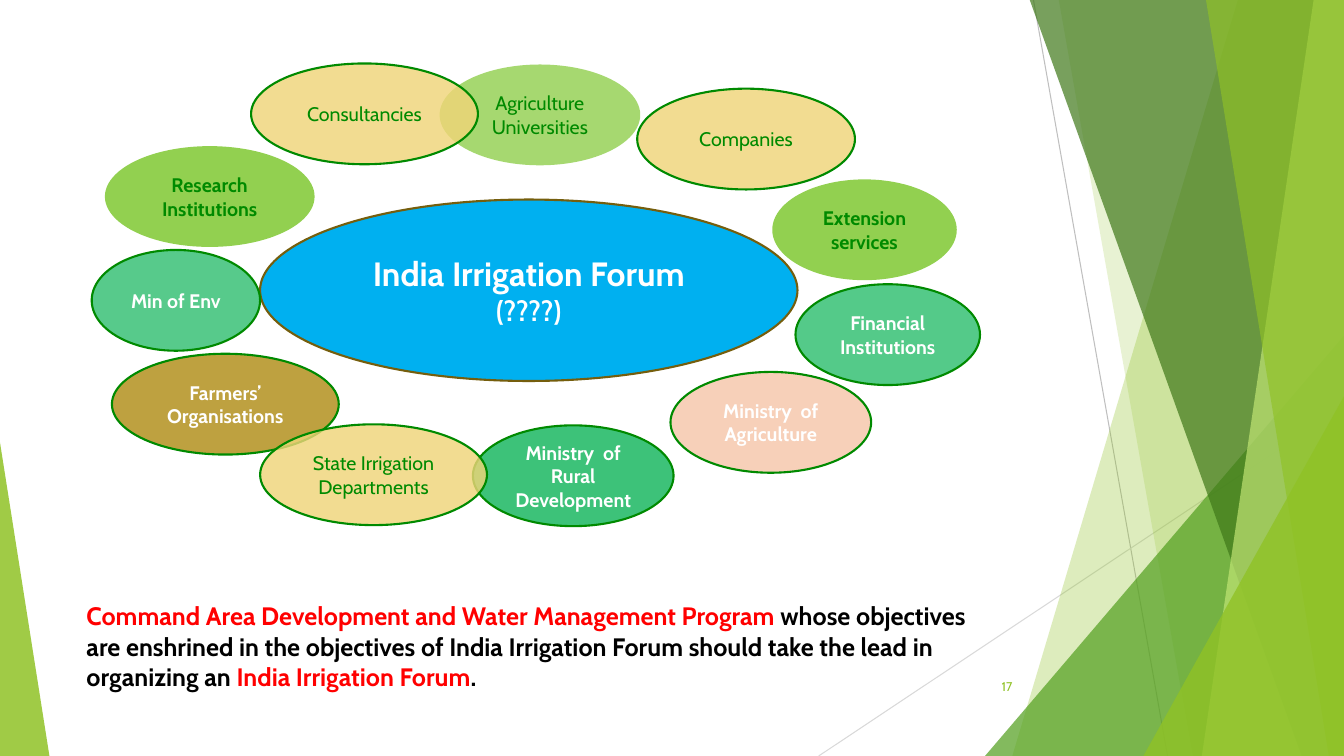
from pptx import Presentation
from pptx.dml.color import RGBColor as RGB
from pptx.enum.shapes import MSO_CONNECTOR as LINK, MSO_SHAPE as SHAPE
from pptx.enum.text import MSO_ANCHOR as ANCHOR, MSO_AUTO_SIZE as FIT, PP_ALIGN as ALIGN
from pptx.oxml.ns import qn
from pptx.util import Emu, Pt
from lxml.etree import SubElement as Sub

SCALE = 9144
WIDE, HIGH = 1333, 750

WHITE = RGB(0xFF, 0xFF, 0xFF)
BLACK = RGB(0x00, 0x00, 0x00)
RED = RGB(0xFF, 0x00, 0x00)
LEAF = RGB(0x90, 0xC2, 0x26)
GRASS = RGB(0x54, 0xA0, 0x21)
MOSS = RGB(0x3F, 0x78, 0x19)
PALE = RGB(0xC0, 0xE4, 0x74)
LIME = RGB(0x92, 0xD0, 0x50)
GREEN = RGB(0x00, 0xB0, 0x50)
DEEP = RGB(0x00, 0x8A, 0x00)
SAND = RGB(0xF0, 0xD5, 0x78)
OCHRE = RGB(0xAF, 0x8C, 0x14)
BROWN = RGB(0x75, 0x5E, 0x0D)
PEACH = RGB(0xF5, 0xC2, 0xA3)
SKY = RGB(0x00, 0xB0, 0xF0)
GREY = RGB(0xBF, 0xBF, 0xBF)
SILVER = RGB(0xD9, 0xD9, 0xD9)


def apply(item, values):
    for name, value in values.items():
        setattr(item, name, value)


class Board:
    font = "Cabin"

    def __init__(self, slide):
        self.slide = slide
        self.shapes = slide.shapes

    def px(self, *sizes):
        return [Emu(size * SCALE) for size in sizes]

    def paint(self, shape, fill, alpha=100, edge=None):
        shape.shadow.inherit = False
        shape.fill.solid()
        shape.fill.fore_color.rgb = fill
        if alpha < 100:
            tint = shape._element.spPr.find(qn("a:solidFill"))[0]
            Sub(tint, qn("a:alpha"), val=str(alpha * 1000))
        if edge is None:
            shape.line.fill.background()
        else:
            shape.line.color.rgb = edge
            shape.line.width = Pt(1.5)

    def label(self, shape, rows, align, anchor):
        frame = shape.text_frame
        apply(frame, {"word_wrap": True, "vertical_anchor": anchor})
        for index, row in enumerate(rows):
            para = frame.add_paragraph() if index else frame.paragraphs[0]
            para.alignment = align
            for text, size, color, bold in row:
                run = para.add_run()
                run.text = text
                apply(run.font, {"name": self.font, "size": Pt(size), "bold": bold})
                run.font.color.rgb = color
        return frame

    def line(self, x1, y1, x2, y2, color):
        link = self.shapes.add_connector(LINK.STRAIGHT, *self.px(x1, y1, x2, y2))
        link.line.color.rgb = color
        link.line.width = Pt(0.75)
        Sub(link._element.spPr, qn("a:effectLst"))

    def band(self, top, base, end, fill, alpha):
        pen = self.shapes.build_freeform(top, -1, scale=SCALE)
        pen.add_line_segments([(WIDE, -1), (end, HIGH), (base, HIGH)], close=True)
        self.paint(pen.convert_to_shape(), fill, alpha)

    def wedge(self, x, y, w, tip, fill, alpha):
        shape = self.shapes.add_shape(
            SHAPE.ISOSCELES_TRIANGLE, *self.px(x, y, w, HIGH - y))
        shape.adjustments[0] = tip
        self.paint(shape, fill, alpha)

    def oval(self, x, y, w, h, rows, fill, alpha, edge):
        shape = self.shapes.add_shape(SHAPE.OVAL, *self.px(x, y, w, h))
        self.paint(shape, fill, alpha, edge)
        self.label(shape, rows, ALIGN.CENTER, ANCHOR.MIDDLE)

    def text(self, x, y, w, h, rows, align, anchor):
        box = self.shapes.add_textbox(*self.px(x, y, w, h))
        return self.label(box, rows, align, anchor)


BANDS_BACK = [(1228, 1004, WIDE, LEAF, 30), (1050, 1183, WIDE, LEAF, 20)]
BANDS_FRONT = [(1021, 1291, WIDE, MOSS, 70), (1303, 1192, WIDE, PALE, 70),
               (1196, 1318, WIDE, LEAF, 65)]

FARMERS = ("Farmers’ Organisations", 111, 351, 225, OCHRE, 81, DEEP, WHITE, True)
MEMBERS = [
    ("Min of Env", 91, 248, 167, GREEN, 66, DEEP, WHITE, True),
    ("Financial Institutions", 789, 282, 183, GREEN, 67, DEEP, WHITE, True),
    ("Ministry  of Rural Development", 469, 422, 199, GREEN, 76, DEEP, WHITE, True),
    ("Research Institutions", 104, 145, 208, LIME, 100, None, DEEP, True),
    ("Extension services", 766, 178, 183, LIME, 100, None, DEEP, True),
    ("Agriculture Universities", 436, 64, 199, LIME, 81, None, DEEP, False),
    ("Companies", 632, 88, 216, SAND, 81, DEEP, DEEP, False),
    ("Consultancies", 249, 63, 225, SAND, 81, DEEP, DEEP, False),
    ("Ministry  of Agriculture", 665, 369, 199, PEACH, 76, DEEP, WHITE, True),
    ("State Irrigation Departments", 258, 421, 225, SAND, 81, DEEP, DEEP, False),
]
FORUM = [[("India Irrigation Forum", 24, WHITE, True)], [("(????)", 20, WHITE, True)]]
LEAD = [
    ("Command Area Development and Water Management Program", RED),
    (" whose objectives are enshrined in the objectives of India Irrigation Forum"
     " should take the lead in organizing an ", BLACK),
    ("India Irrigation Forum", RED),
    (".", BLACK),
]


def main():
    deck = Presentation()
    apply(deck, {"slide_width": Emu(WIDE * SCALE), "slide_height": Emu(HIGH * SCALE)})
    board = Board(deck.slides.add_slide(deck.slide_layouts[6]))

    board.line(1025, 0, 1158, HIGH, GREY)
    board.line(WIDE, 403, 812, HIGH, SILVER)
    for top, base, end, fill, alpha in BANDS_BACK:
        board.band(top, base, end, fill, alpha)
    board.wedge(977, 333, 356, 1, GRASS, 72)
    for top, base, end, fill, alpha in BANDS_FRONT:
        board.band(top, base, end, fill, alpha)
    board.wedge(1134, 393, 199, 1, LEAF, 80)
    board.wedge(0, 439, 49, 0, LEAF, 85)

    def member(name, x, y, w, fill, alpha, edge, color, bold):
        board.oval(x, y, w, 100, [[(name, 14, color, bold)]], fill, alpha, edge)

    member(*FARMERS)
    board.oval(258, 198, 533, 180, FORUM, SKY, 100, BROWN)
    for item in MEMBERS:
        member(*item)

    board.text(939, 661, 75, 40, [[("17", 9, LEAF, False)]], ALIGN.RIGHT, ANCHOR.MIDDLE)
    lead = [[(text, 18, color, True) for text, color in LEAD]]
    frame = board.text(76, 591, 896, 101, lead, ALIGN.LEFT, ANCHOR.TOP)
    frame.auto_size = FIT.SHAPE_TO_FIT_TEXT

    deck.save("out.pptx")


if __name__ == "__main__":
    main()
